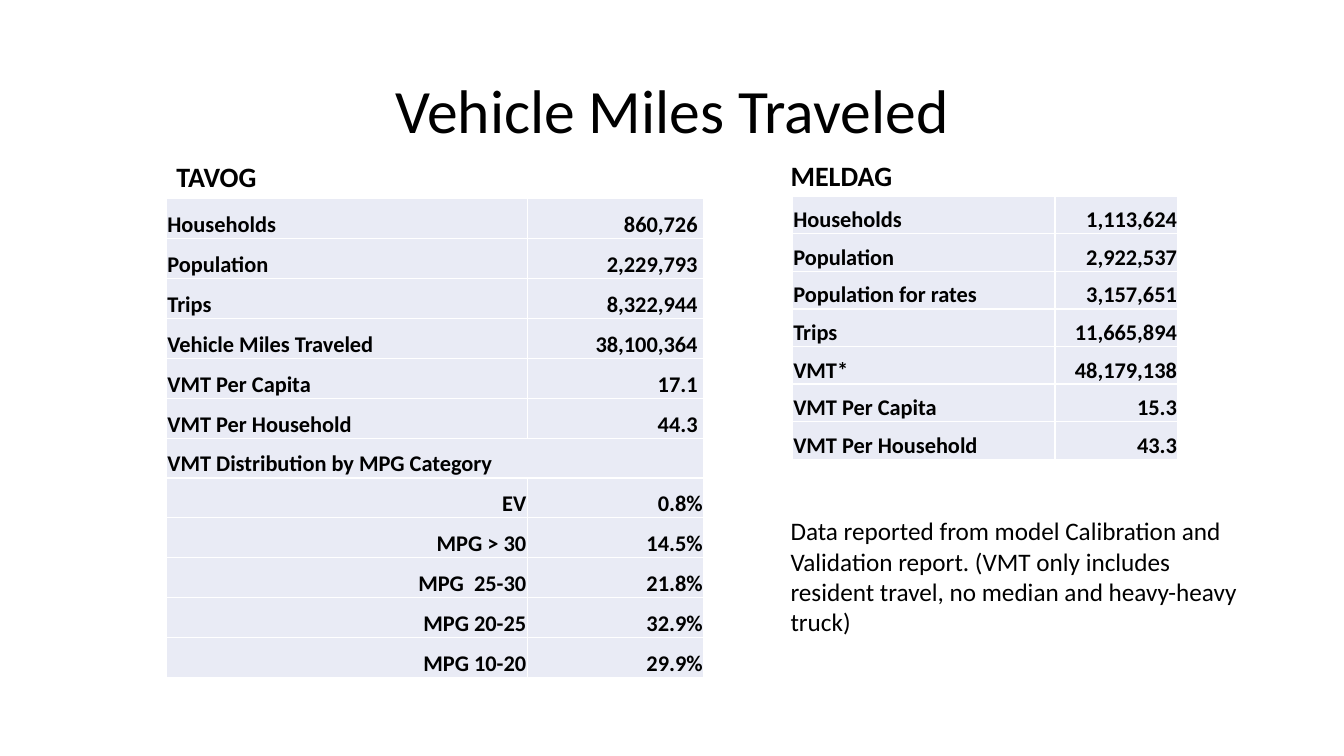
from dataclasses import dataclass

from lxml.etree import SubElement
from pptx import Presentation
from pptx.dml.color import RGBColor
from pptx.enum.text import MSO_ANCHOR, PP_ALIGN
from pptx.oxml.ns import qn
from pptx.slide import Slide
from pptx.table import _Cell
from pptx.text.text import TextFrame
from pptx.util import Emu, Inches, Pt

SLIDE_WIDTH, SLIDE_HEIGHT = Inches(13.33), Inches(7.5)
GRID_SIZE = 100  # columns across the slide and rows down it
COLORS = {"text": "000000", "cell": "E9EBF5", "border": "FFFFFF"}
FORMATS = {
    "title": {"size": Pt(44), "bold": False},
    "heading": {"size": Pt(20), "bold": True},
    "note": {"size": Pt(18), "bold": False},
    "cell": {"size": Pt(16), "bold": True},
}
CELL_LAYOUT = {
    "margin_left": Inches(0.01),
    "margin_right": Inches(0.01),
    "margin_top": Inches(0.01),
    "margin_bottom": 0,
    "vertical_anchor": MSO_ANCHOR.BOTTOM,
}
NUMBER_MARGIN = Inches(0.06)


@dataclass(frozen=True)
class Label:
    text: str
    format_name: str
    left: float
    top: float
    width: float
    height: float
    alignment: PP_ALIGN = PP_ALIGN.LEFT
    anchor: MSO_ANCHOR = MSO_ANCHOR.TOP
    line_spacing: float = 1.0


@dataclass(frozen=True)
class Row:
    name: str
    value: str = ""
    name_alignment: PP_ALIGN = PP_ALIGN.LEFT
    value_margin: Emu = CELL_LAYOUT["margin_right"]


@dataclass(frozen=True)
class RegionTable:
    left: float
    top: float
    column_widths: tuple[float, float]
    row_height: float
    rows: list[Row]


LABELS = [
    Label("Vehicle Miles Traveled", "title", 6.9, 5.33, 86.25, 19.33,
          PP_ALIGN.CENTER, MSO_ANCHOR.MIDDLE, 0.9),
    Label("TAVOG", "heading", 12.38, 20.47, 14.48, 5.87),
    Label("MELDAG", "heading", 58.08, 20.27, 14.48, 5.87),
    Label("Data reported from model Calibration and Validation report. "
          "(VMT only includes resident travel, no median and heavy-heavy truck)",
          "note", 58.08, 67.55, 36.22, 17.47),
]

LEFT_TOTALS = [
    ("Households", "860,726"),
    ("Population", "2,229,793"),
    ("Trips", "8,322,944"),
    ("Vehicle Miles Traveled", "38,100,364"),
    ("VMT Per Capita", "17.1"),
    ("VMT Per Household", "44.3"),
]
LEFT_SHARES = [
    ("EV", "0.8%"),
    ("MPG > 30", "14.5%"),
    ("MPG  25-30", "21.8%"),
    ("MPG 20-25", "32.9%"),
    ("MPG 10-20", "29.9%"),
]
RIGHT_TOTALS = [
    ("Households", "1,113,624"),
    ("Population", "2,922,537"),
    ("Population for rates", "3,157,651"),
    ("Trips", "11,665,894"),
    ("VMT*", "48,179,138"),
    ("VMT Per Capita", "15.3"),
    ("VMT Per Household", "43.3"),
]
TABLES = [
    RegionTable(12.38, 26.3, (26.85, 13.13), 5.28, [
        *(Row(*total, value_margin=NUMBER_MARGIN) for total in LEFT_TOTALS),
        Row("VMT Distribution by MPG Category"),
        *(Row(*share, name_alignment=PP_ALIGN.RIGHT) for share in LEFT_SHARES),
    ]),
    RegionTable(58.95, 25.97, (19.55, 9.15), 4.97,
                [Row(*total) for total in RIGHT_TOTALS]),
]


def columns(count: float) -> Emu:
    return Emu(round(SLIDE_WIDTH * count / GRID_SIZE))


def rows(count: float) -> Emu:
    return Emu(round(SLIDE_HEIGHT * count / GRID_SIZE))


def write_text(frame: TextFrame, text: str, format_name: str, alignment: PP_ALIGN,
               line_spacing: float = 1.0) -> None:
    paragraph = frame.paragraphs[0]
    paragraph.alignment = alignment
    paragraph.line_spacing = line_spacing
    run = paragraph.add_run()
    run.text = text
    run.font.name = "Calibri"
    run.font.color.rgb = RGBColor.from_string(COLORS["text"])
    for attribute, value in FORMATS[format_name].items():
        setattr(run.font, attribute, value)


def add_label(slide: Slide, label: Label) -> None:
    box = slide.shapes.add_textbox(columns(label.left), rows(label.top),
                                   columns(label.width), rows(label.height))
    frame = box.text_frame
    frame.word_wrap = True
    frame.vertical_anchor = label.anchor
    write_text(frame, label.text, label.format_name, label.alignment, label.line_spacing)


def style_cell(cell: _Cell) -> None:
    """Apply the margins, white borders and fill shared by all cells."""
    for attribute, value in CELL_LAYOUT.items():
        setattr(cell, attribute, value)
    properties = cell._tc.get_or_add_tcPr()
    for side in ("a:lnL", "a:lnR", "a:lnT", "a:lnB"):
        line = SubElement(properties, qn(side), w=str(Pt(1)))
        fill = SubElement(line, qn("a:solidFill"))
        SubElement(fill, qn("a:srgbClr"), val=COLORS["border"])
    cell.fill.solid()
    cell.fill.fore_color.rgb = RGBColor.from_string(COLORS["cell"])


def add_region_table(slide: Slide, region: RegionTable) -> None:
    row_count = len(region.rows)
    table = slide.shapes.add_table(
        row_count, 2, columns(region.left), rows(region.top),
        columns(sum(region.column_widths)), rows(region.row_height * row_count)).table
    table.first_row = table.horz_banding = False
    for column, width in zip(table.columns, region.column_widths):
        column.width = columns(width)
    for index, row in enumerate(region.rows):
        table.rows[index].height = rows(region.row_height)
        name_cell, value_cell = table.cell(index, 0), table.cell(index, 1)
        for cell in (name_cell, value_cell):
            style_cell(cell)
        write_text(name_cell.text_frame, row.name, "cell", row.name_alignment)
        if row.value:
            value_cell.margin_right = row.value_margin
            write_text(value_cell.text_frame, row.value, "cell", PP_ALIGN.RIGHT)
        else:
            name_cell.merge(value_cell)


def main() -> None:
    presentation = Presentation()
    presentation.slide_width, presentation.slide_height = SLIDE_WIDTH, SLIDE_HEIGHT
    slide = presentation.slides.add_slide(presentation.slide_layouts[6])
    for label in LABELS:
        add_label(slide, label)
    for region in TABLES:
        add_region_table(slide, region)
    presentation.save("out.pptx")


if __name__ == "__main__":
    main()
